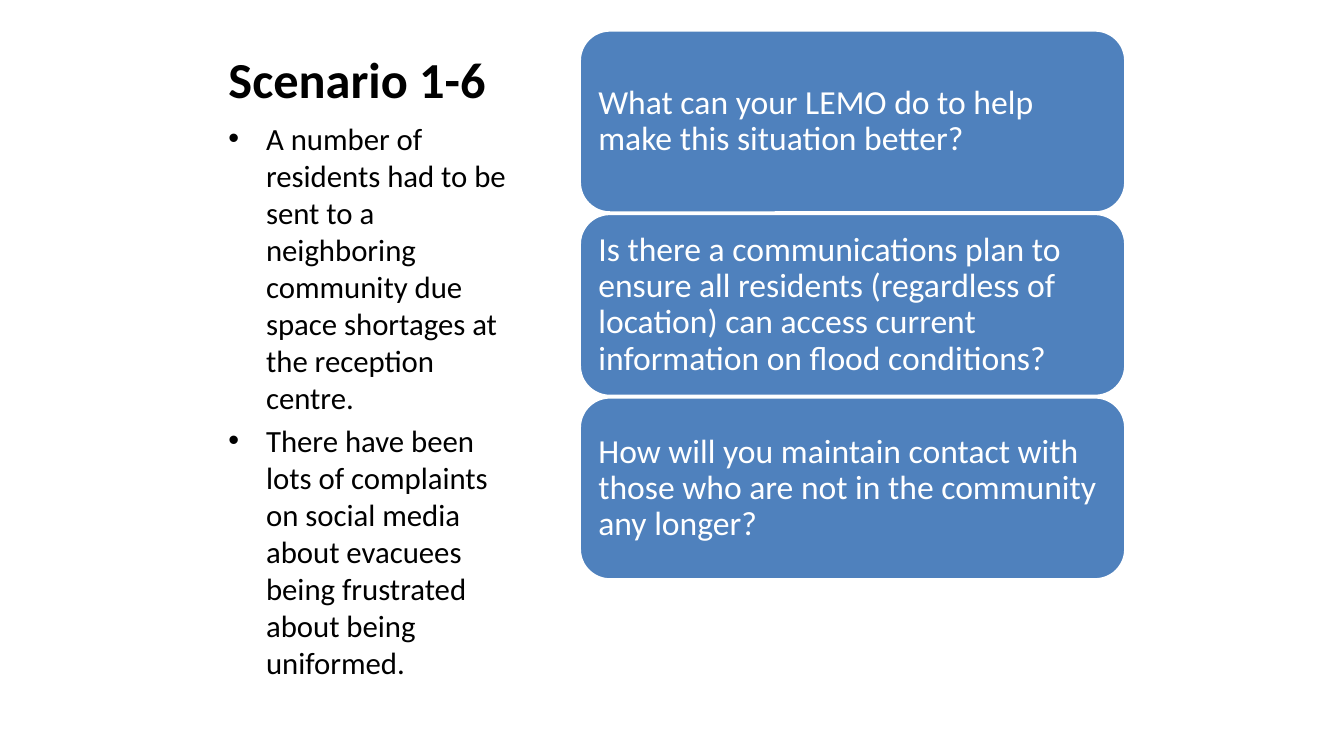
from dataclasses import dataclass

from lxml import etree
from pptx import Presentation
from pptx.dml.color import RGBColor
from pptx.enum import shapes, text
from pptx.oxml import ns
from pptx.util import Inches, Pt

COLUMNS, ROWS = 160, 90
CELL = Inches(1 / 12)


@dataclass(frozen=True)
class Theme:
    font: str = "Calibri"
    ink: RGBColor = RGBColor(0, 0, 0)
    paper: RGBColor = RGBColor(0xFF, 0xFF, 0xFF)
    card: RGBColor = RGBColor(0x4F, 0x81, 0xBD)
    title_size: float = 36
    bullet_size: float = 22
    card_size: float = 24


THEME = Theme()
LEFT_COLUMN, CARD_COLUMN = 26, 69
TOP_ROW = 3.6
CARD_WIDTH, CARD_HEIGHT, CARD_PITCH = 65, 21.72, 21.84
BULLET_INDENT = 4.5

SITUATION = (
    "A number of residents had to be sent to a neighboring community due "
    "space shortages at the reception centre.",
    "There have been lots of complaints on social media about evacuees being "
    "frustrated about being uniformed.",
)
QUESTIONS = (
    "What can your LEMO do to help make this situation better?",
    "Is there a communications plan to ensure all residents (regardless of "
    "location) can access current information on flood conditions?",
    "How will you maintain contact with those who are not in the community "
    "any longer?",
)


def cells(*counts):
    return [round(count * CELL) for count in counts]


def apply(target, values):
    for name, value in values.items():
        setattr(target, name, value)


def style(paragraph, size, color, bold=False):
    paragraph.alignment = text.PP_ALIGN.LEFT
    apply(paragraph.font, {"name": THEME.font, "size": Pt(size), "bold": bold})
    paragraph.font.color.rgb = color


def add_bullet(paragraph):
    properties = paragraph._p.get_or_add_pPr()
    indent = cells(BULLET_INDENT)[0]
    properties.set("marL", str(indent))
    properties.set("indent", str(-indent))
    for tag, name, value in (("a:buFont", "typeface", "Arial"),
                             ("a:buChar", "char", "•")):
        etree.SubElement(properties, ns.qn(tag)).set(name, value)


def set_title(slide, wording):
    title = slide.shapes.title
    apply(title, dict(zip(("left", "top", "width", "height"),
                          cells(LEFT_COLUMN, TOP_ROW, 39.5, 15.24))))
    frame = title.text_frame
    frame.text = wording
    apply(frame, {"vertical_anchor": text.MSO_ANCHOR.BOTTOM,
                  "margin_bottom": Inches(0.49), "word_wrap": True,
                  "auto_size": text.MSO_AUTO_SIZE.NONE})
    style(frame.paragraphs[0], THEME.title_size, THEME.ink, bold=True)


def add_situation(slide, points):
    frame = slide.shapes.add_textbox(
        *cells(LEFT_COLUMN, 13.68, 36, 57.24)).text_frame
    frame.word_wrap = True
    for number, point in enumerate(points):
        paragraph = frame.add_paragraph() if number else frame.paragraphs[0]
        paragraph.text = point
        if number:
            paragraph.space_before = Pt(4.4)
        add_bullet(paragraph)
        style(paragraph, THEME.bullet_size, THEME.ink)


def add_question(slide, row, question):
    card = slide.shapes.add_shape(
        shapes.MSO_SHAPE.ROUNDED_RECTANGLE,
        *cells(CARD_COLUMN, row, CARD_WIDTH, CARD_HEIGHT))
    card.shadow.inherit = False
    card.fill.solid()
    card.fill.fore_color.rgb = THEME.card
    card.line.color.rgb = THEME.paper
    card.line.width = Pt(2)
    frame = card.text_frame
    frame.text = question
    apply(frame, {"word_wrap": True,
                  "vertical_anchor": text.MSO_ANCHOR.MIDDLE})
    apply(frame, {f"margin_{side}": Inches(0.1)
                  for side in ("left", "top", "right", "bottom")})
    frame.paragraphs[0].line_spacing = 0.9
    style(frame.paragraphs[0], THEME.card_size, THEME.paper)


def main():
    deck = Presentation()
    deck.slide_width, deck.slide_height = cells(COLUMNS, ROWS)
    slide = deck.slides.add_slide(deck.slide_layouts.get_by_name("Title Only"))
    set_title(slide, "Scenario 1-6")
    add_situation(slide, SITUATION)
    for number, question in enumerate(QUESTIONS):
        add_question(slide, TOP_ROW + number * CARD_PITCH, question)
    deck.save("out.pptx")


if __name__ == "__main__":
    main()
